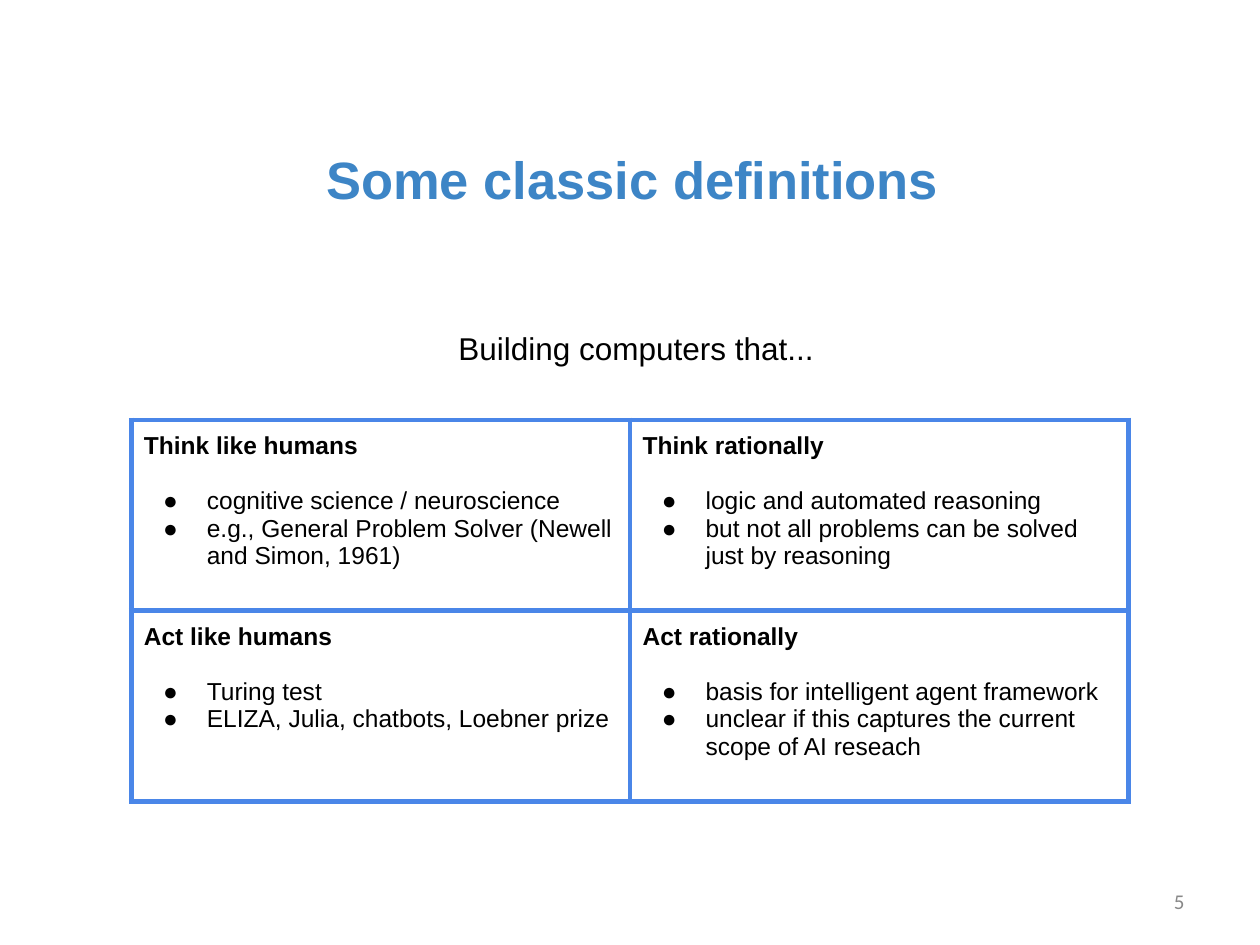
import pptx
import pptx.dml.color
import pptx.enum.text
import pptx.oxml.ns
import pptx.util
from lxml import etree

Pt = pptx.util.Pt
ALIGN = pptx.enum.text.PP_ALIGN
ANCHOR = pptx.enum.text.MSO_ANCHOR
BLACK, TITLE_BLUE, BORDER_BLUE, GRAY = "000000", "3D85C6", "4A86E8", "888888"


def add_run(paragraph, text, size, color, bold=False, font="Arial"):
    run = paragraph.add_run()
    run.text = text
    run.font.name = font
    run.font.size = Pt(size)
    run.font.bold = bold
    run.font.color.rgb = pptx.dml.color.RGBColor.from_string(color)


def add_element(parent, tag, **attributes):
    """Append a DrawingML child element to parent."""
    return etree.SubElement(parent, pptx.oxml.ns.qn(tag), attributes)


presentation = pptx.Presentation()
presentation.slide_width, presentation.slide_height = Pt(720), Pt(540)
slide = presentation.slides.add_slide(presentation.slide_layouts[6])

# Definitions table
definitions = [
    [
        ("Think like humans", ["cognitive science / neuroscience",
                               "e.g., General Problem Solver (Newell and Simon, 1961)"]),
        ("Think rationally", ["logic and automated reasoning",
                              "but not all problems can be solved just by reasoning"]),
    ],
    [
        ("Act like humans", ["Turing test", "ELIZA, Julia, chatbots, Loebner prize"]),
        ("Act rationally", ["basis for intelligent agent framework",
                            "unclear if this captures the current scope of AI reseach"]),
    ],
]
table = slide.shapes.add_table(2, 2, Pt(75), Pt(240), Pt(570), Pt(218)).table
table.first_row = table.horz_banding = False

for row_index, row in enumerate(definitions):
    for column_index, (heading, points) in enumerate(row):
        cell = table.cell(row_index, column_index)
        cell.margin_left = cell.margin_right = Pt(7.2)
        cell.margin_top = cell.margin_bottom = Pt(7.2)

        paragraph = cell.text_frame.paragraphs[0]
        paragraph.space_after = Pt(15.5)
        add_run(paragraph, heading, 14, BLACK, bold=True)
        for point in points:
            paragraph = cell.text_frame.add_paragraph()
            add_run(paragraph, point, 14, BLACK)
            properties = paragraph._p.get_or_add_pPr()
            properties.set("marL", str(Pt(36)))
            properties.set("indent", str(-Pt(25)))
            add_element(add_element(properties, "a:buClr"), "a:srgbClr", val=BLACK)
            add_element(properties, "a:buFont", typeface="Arial")
            add_element(properties, "a:buChar", char="●")

        cell_properties = cell._tc.get_or_add_tcPr()
        for side in ("L", "R", "T", "B"):
            border = add_element(cell_properties, f"a:ln{side}", w=str(Pt(3)))
            add_element(add_element(border, "a:solidFill"), "a:srgbClr", val=BORDER_BLUE)
        cell.fill.background()

# Title, lead-in and slide number
for text, box, size, color, bold, font, alignment, anchor, margin in [
    ("Some classic definitions", (179.25, 77, 381, 51), 30, TITLE_BLUE, True,
     "Arial", ALIGN.LEFT, ANCHOR.TOP, 7.2),
    ("Building computers that...", (185.75, 180.75, 355.5, 42), 18, BLACK, False,
     "Arial", ALIGN.CENTER, ANCHOR.TOP, 7.2),
    ("5", (516, 500.5, 168, 28.75), 12, GRAY, False,
     "Calibri", ALIGN.RIGHT, ANCHOR.MIDDLE, 3.6),
]:
    frame = slide.shapes.add_textbox(*map(Pt, box)).text_frame
    frame.word_wrap = True
    frame.vertical_anchor = anchor
    frame.margin_left = frame.margin_right = Pt(7.2)
    frame.margin_top = frame.margin_bottom = Pt(margin)
    frame.paragraphs[0].alignment = alignment
    add_run(frame.paragraphs[0], text, size, color, bold, font)

presentation.save("out.pptx")
